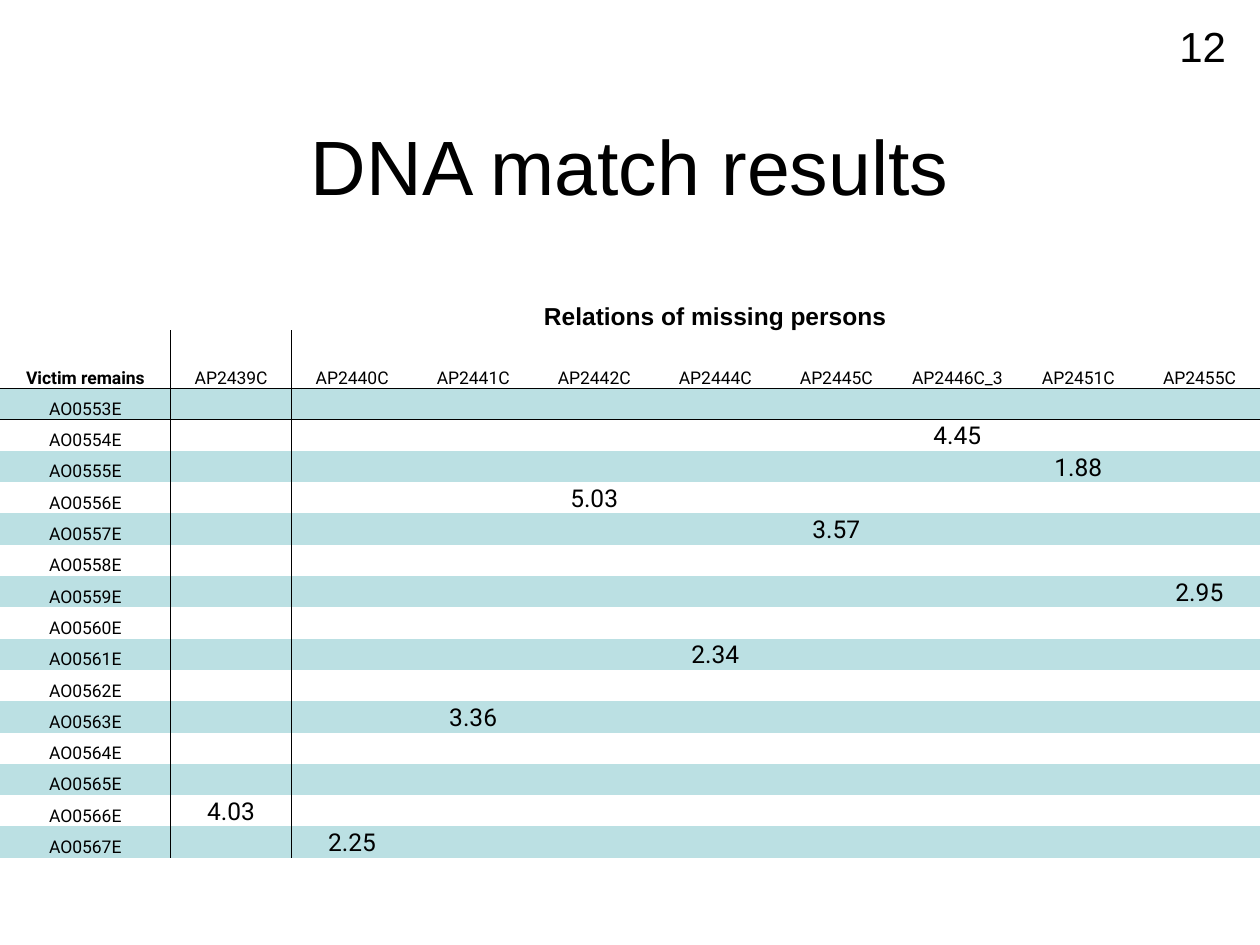
"""Build the DNA match results slide."""
from dataclasses import dataclass

from lxml import etree
from pptx import Presentation
from pptx import util as u
from pptx.dml.color import RGBColor
from pptx.enum import text
from pptx.oxml.ns import qn


@dataclass(frozen=True)
class Theme:
    ink: str = "000000"
    band: str = "BBE0E3"
    heading_font: str = "Arial"
    body_font: str = "Roboto"
    title: int = 44
    number: int = 24
    score: int = 14
    label: int = 10


@dataclass(frozen=True)
class Style:
    size: int
    font: str
    align: text.PP_ALIGN = text.PP_ALIGN.CENTER
    bold: bool = False


@dataclass(frozen=True)
class Box:
    words: str
    left: float
    top: float
    width: float
    height: float
    style: Style
    anchor: text.MSO_ANCHOR


T = Theme()
LABEL = Style(T.label, T.body_font)
LABEL_BOLD = Style(T.label, T.body_font, bold=True)
SCORE = Style(T.score, T.body_font)
GROUP = Style(T.score, T.heading_font, bold=True)

BOXES = [
    Box("DNA match results", 54, 49, 612, 90,
        Style(T.title, T.heading_font), text.MSO_ANCHOR.MIDDLE),
    Box("12", 655.2, 8, 52.5, 33,
        Style(T.number, T.heading_font, text.PP_ALIGN.RIGHT), text.MSO_ANCHOR.TOP),
]
RELATIONS = ["AP2439C", "AP2440C", "AP2441C", "AP2442C", "AP2444C",
             "AP2445C", "AP2446C_3", "AP2451C", "AP2455C"]
REMAINS = [f"AO0{n}E" for n in range(553, 568)]
SCORES = {
    ("AO0554E", "AP2446C_3"): "4.45",
    ("AO0555E", "AP2451C"): "1.88",
    ("AO0556E", "AP2442C"): "5.03",
    ("AO0557E", "AP2445C"): "3.57",
    ("AO0559E", "AP2455C"): "2.95",
    ("AO0561E", "AP2444C"): "2.34",
    ("AO0563E", "AP2441C"): "3.36",
    ("AO0566E", "AP2439C"): "4.03",
    ("AO0567E", "AP2440C"): "2.25",
}
HEADER_ROWS = 2
TABLE_TOP, TABLE_WIDTH, FIRST_COLUMN = 155.7, 720, 97.5
HEADER_HEIGHT, ROW_HEIGHT = 33.1, 17.9
NO_STYLE_NO_GRID = "{2D5ABB26-0587-4C30-8999-92F81FD0307C}"


def write(tf, words: str, style: Style) -> None:
    """Put one styled paragraph in a text frame."""
    p = tf.paragraphs[0]
    p.alignment = style.align
    p.font.size = u.Pt(style.size)
    p.font.name = style.font
    p.font.bold = style.bold
    p.font.color.rgb = RGBColor.from_string(T.ink)
    if words:
        p.add_run().text = words
    else:
        etree.SubElement(p._p, qn("a:endParaRPr"), sz=str(style.size * 100))


def add_box(s, box: Box) -> None:
    """Add a wrapped text box."""
    sp = s.shapes.add_textbox(*map(u.Pt, (box.left, box.top, box.width, box.height)))
    tf = sp.text_frame
    tf.word_wrap = True
    tf.vertical_anchor = box.anchor
    write(tf, box.words, box.style)


def add_border(cell, side: str) -> None:
    """Draw a thin line on one side (L, R, T or B) of a cell."""
    ln = etree.SubElement(cell._tc.get_or_add_tcPr(), qn(f"a:ln{side}"),
                          w=str(u.Pt(1)))
    fill = etree.SubElement(ln, qn("a:solidFill"))
    etree.SubElement(fill, qn("a:srgbClr"), val=T.ink)


def cell_content(row: int, col: int) -> tuple[str, Style]:
    """Return the words and style that belong in a cell."""
    if row == 0:
        return ("Relations of missing persons", GROUP) if col == 1 else ("", LABEL)
    if row == 1:
        return (RELATIONS[col - 1], LABEL) if col else ("Victim remains", LABEL_BOLD)
    remains = REMAINS[row - HEADER_ROWS]
    if col == 0:
        return remains, LABEL
    score = SCORES.get((remains, RELATIONS[col - 1]), "")
    return score, SCORE if score else LABEL


def format_cell(cell, row: int, col: int) -> None:
    """Set the text, rules and band of one cell."""
    cell.margin_left = cell.margin_right = cell.margin_top = u.Pt(0.75)
    cell.margin_bottom = u.Pt(0)
    cell.vertical_anchor = text.MSO_ANCHOR.BOTTOM
    write(cell.text_frame, *cell_content(row, col))
    rules = {"L": row >= 1 and col == 1, "R": row >= 1 and col == 0,
             "T": row == HEADER_ROWS, "B": row == HEADER_ROWS - 1}
    for side, drawn in rules.items():
        if drawn:
            add_border(cell, side)
    if row >= HEADER_ROWS and (row - HEADER_ROWS) % 2 == 0:
        cell.fill.solid()
        cell.fill.fore_color.rgb = RGBColor.from_string(T.band)
    else:
        cell.fill.background()


def add_matches(s) -> None:
    """Add the table of match scores."""
    rows, cols = HEADER_ROWS + len(REMAINS), 1 + len(RELATIONS)
    height = HEADER_ROWS * HEADER_HEIGHT + len(REMAINS) * ROW_HEIGHT
    table = s.shapes.add_table(rows, cols, u.Pt(0), u.Pt(TABLE_TOP),
                               u.Pt(TABLE_WIDTH), u.Pt(height)).table
    table.first_row = table.horz_banding = False
    table._tbl.tblPr.find(qn("a:tableStyleId")).text = NO_STYLE_NO_GRID
    relation_width = (TABLE_WIDTH - FIRST_COLUMN) / len(RELATIONS)
    for i, column in enumerate(table.columns):
        column.width = u.Pt(relation_width if i else FIRST_COLUMN)
    for i, table_row in enumerate(table.rows):
        table_row.height = u.Pt(HEADER_HEIGHT if i < HEADER_ROWS else ROW_HEIGHT)
        for j, cell in enumerate(table_row.cells):
            format_cell(cell, i, j)
    table.cell(0, 1).merge(table.cell(0, cols - 1))


def main() -> None:
    """Create and save the presentation."""
    prs = Presentation()
    prs.slide_width, prs.slide_height = u.Pt(720), u.Pt(540)
    s = prs.slides.add_slide(prs.slide_layouts[6])
    for box in BOXES:
        add_box(s, box)
    add_matches(s)
    prs.save("out.pptx")


if __name__ == "__main__":
    main()
